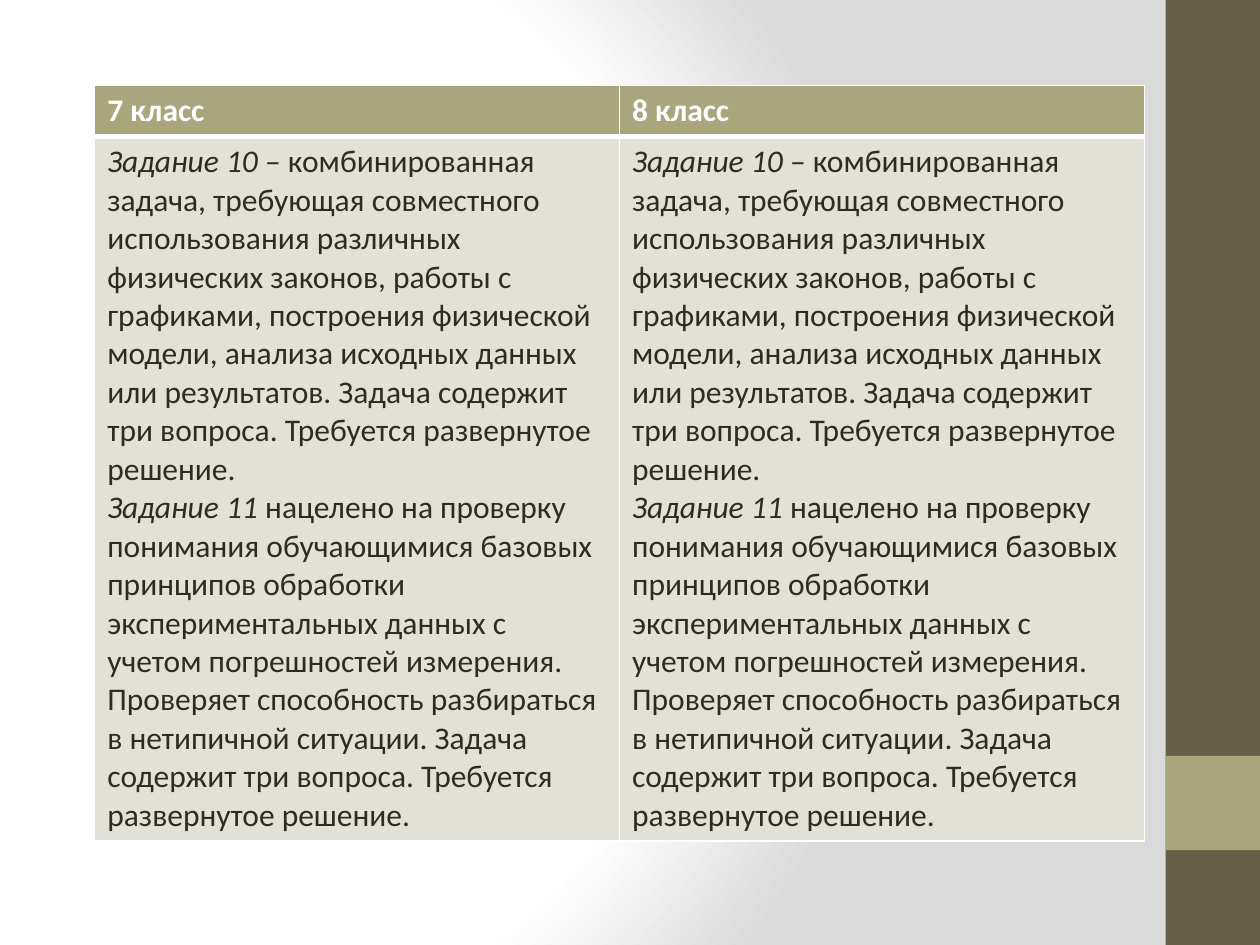
"""Builds a slide comparing physics tasks for grades 7 and 8."""
from pptx import Presentation
from pptx.dml.color import RGBColor
from pptx.enum.shapes import MSO_SHAPE
from pptx.oxml import parse_xml
from pptx.oxml.ns import nsdecls
from pptx.util import Cm, Pt

RECT = MSO_SHAPE.RECTANGLE
FONT = "Calibri"
HEX = {
    "white": "FFFFFF",
    "gray": "DADADA",
    "brown": "675E47",
    "olive": "A9A57C",
    "pale": "E2E1D7",
    "ink": "2F2B20",
}
GRADES = ["7 класс", "8 класс"]
TASKS = [
    ("Задание 10", " – комбинированная задача, требующая совместного использования "
     "различных физических законов, работы с графиками, построения физической модели, "
     "анализа исходных данных или результатов. Задача содержит три вопроса. "
     "Требуется развернутое решение."),
    ("Задание 11", " нацелено на проверку понимания обучающимися базовых принципов "
     "обработки экспериментальных данных с учетом погрешностей измерения. Проверяет "
     "способность разбираться в нетипичной ситуации. Задача содержит три вопроса. "
     "Требуется развернутое решение."),
]


def rgb(name):
    return RGBColor.from_string(HEX[name])


def add_back(slide):
    stops = "".join(
        f'<a:gs pos="{pos * 1000}"><a:srgbClr val="{HEX[name]}"/></a:gs>'
        for pos, name in [(0, "white"), (75, "white"), (100, "gray")])
    back = parse_xml(
        f'<p:bg {nsdecls("p", "a")}><p:bgPr><a:gradFill rotWithShape="1">'
        f'<a:gsLst>{stops}</a:gsLst><a:path path="circle">'
        '<a:fillToRect l="20000" t="50000" r="100000" b="50000"/></a:path>'
        '</a:gradFill><a:effectLst/></p:bgPr></p:bg>')
    slide.element.cSld.insert(0, back)


def add_block(slide, top, height, color):
    block = slide.shapes.add_shape(RECT, Cm(23.5), Cm(top), Cm(1.9), Cm(height))
    block.shadow.inherit = False
    block.fill.solid()
    block.fill.fore_color.rgb = rgb(color)
    block.line.fill.background()


def add_run(para, text, color, bold=False, italic=False):
    run = para.add_run()
    run.text = text
    font = run.font
    font.name, font.size = FONT, Pt(18)
    font.bold, font.italic = bold, italic
    font.color.rgb = rgb(color)


def style_cell(cell, color, top, bottom):
    cell.fill.solid()
    cell.fill.fore_color.rgb = rgb(color)
    props = cell._tc.get_or_add_tcPr()
    for place, (side, width) in enumerate(zip("LRTB", (1, 1, top, bottom))):
        props.insert(place, parse_xml(
            f'<a:ln{side} {nsdecls("a")} w="{Pt(width)}"><a:solidFill>'
            f'<a:srgbClr val="{HEX["white"]}"/></a:solidFill></a:ln{side}>'))


def fill_tasks(cell):
    frame = cell.text_frame
    for index, (title, text) in enumerate(TASKS):
        para = frame.add_paragraph() if index else frame.paragraphs[0]
        add_run(para, title, "ink", italic=True)
        add_run(para, text, "ink")


def add_grid(slide):
    heights = [0.94, 13.06]
    grid = slide.shapes.add_table(
        2, len(GRADES), Cm(1.91), Cm(1.72), Cm(21.16), Cm(sum(heights))).table
    grid.first_row = grid.horz_banding = False
    for row, height in zip(grid.rows, heights):
        row.height = Cm(height)
    for col, grade in enumerate(GRADES):
        head, body = grid.cell(0, col), grid.cell(1, col)
        style_cell(head, "olive", 1, 3)
        add_run(head.text_frame.paragraphs[0], grade, "white", bold=True)
        style_cell(body, "pale", 3, 1)
        fill_tasks(body)


def main():
    deck = Presentation()
    deck.slide_width, deck.slide_height = Cm(25.4), Cm(19.05)
    slide = deck.slides.add_slide(deck.slide_layouts[6])
    add_back(slide)
    add_block(slide, 0, 19.05, "brown")
    add_block(slide, 15.24, 1.9, "olive")
    add_grid(slide)
    deck.save("out.pptx")


if __name__ == "__main__":
    main()
